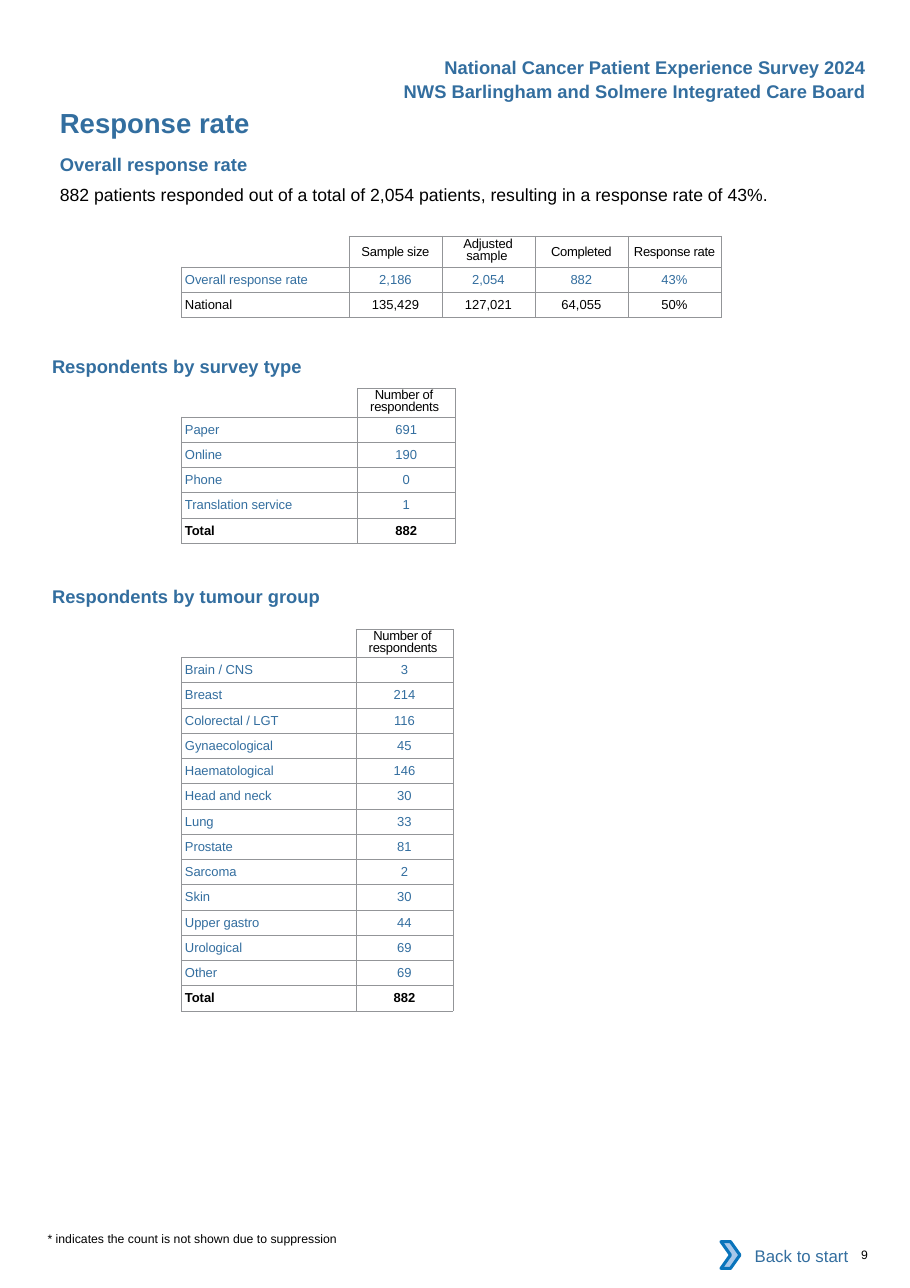
"""Build the survey response rate page."""
from dataclasses import dataclass

from lxml import etree
from pptx import Presentation
from pptx import util as u
from pptx.dml import color
from pptx.enum import shapes, text
from pptx.oxml import ns

BLUE, BLACK, WHITE, GREY = "336E9F", "000000", "FFFFFF", "939598"
LEFT, CENTER, RIGHT = text.PP_ALIGN.LEFT, text.PP_ALIGN.CENTER, text.PP_ALIGN.RIGHT
BODY_ROW_HEIGHT = 16.5
TABLE_LEFT = 118.6


@dataclass(frozen=True)
class Style:
    size: float
    color: str = BLACK
    bold: bool = False
    align: int = LEFT
    margin: float = 0
    indent: float = 0
    line_spacing: float | None = None
    tracking: float = 0


@dataclass(frozen=True)
class Label:
    words: str
    left: float
    top: float
    width: float
    height: float
    style: Style


@dataclass(frozen=True)
class Row:
    values: tuple[str, ...]
    color: str = BLUE
    bold: bool = False


@dataclass(frozen=True)
class Grid:
    top: float
    widths: tuple[float, ...]
    header_height: float
    headers: tuple[tuple[str, Style], ...]
    rows: tuple[Row, ...]


HEADING = Style(12, BLUE, True, margin=0.9)
BANNER = Style(12, BLUE, True, RIGHT)
NOTE = Style(8, margin=0.9)
HEADER = Style(8.5, align=CENTER, tracking=-0.2)
ADJUSTED = Style(8.5, margin=16, indent=-2, line_spacing=7.6, tracking=-0.1)
RESPONDENTS = Style(8.5, margin=8.4, indent=3, line_spacing=7.6, tracking=-0.2)

TITLE = Label("Response rate", 38.2, 69.1, 297.4, 21.6, Style(18, BLUE, True, margin=0.9))
LABELS = (
    Label("National Cancer Patient Experience Survey 2024", 220, 36.4, 345.9, 14.4, BANNER),
    Label("NWS Barlingham and Solmere Integrated Care Board", 220, 52.6, 345.9, 14.4, BANNER),
    Label("Overall response rate", 38.2, 99.8, 297.4, 14.4, HEADING),
    Label("882 patients responded out of a total of 2,054 patients, "
          "resulting in a response rate of 43%.",
          38.2, 120.2, 518.4, 13.7, Style(11.5, margin=0.9)),
    Label("Respondents by survey type", 33.1, 232.3, 180, 14.4, HEADING),
    Label("Respondents by tumour group", 33.1, 382.3, 190, 14.4, HEADING),
    Label("* indicates the count is not shown due to suppression",
          30.2, 804.7, 200, 9.4, NOTE),
    Label("9", 555.6, 815.4, 36.7, 9.4, Style(8, margin=7.2)),
)
BACK_LINK = Label("Back to start", 476.6, 805.4, 85, 30.2, Style(11, BLUE, align=RIGHT))

GRIDS = (
    Grid(154.3, (109.5, 60.75, 60.75, 60.75, 61), 20.2,
         (("Sample size", HEADER), ("Adjusted sample", ADJUSTED),
          ("Completed", HEADER), ("Response rate", HEADER)),
         (Row(("Overall response rate", "2,186", "2,054", "882", "43%")),
          Row(("National", "135,429", "127,021", "64,055", "50%"), BLACK))),
    Grid(253.9, (115, 64), 18.6, (("Number of respondents", RESPONDENTS),),
         (Row(("Paper", "691")), Row(("Online", "190")), Row(("Phone", "0")),
          Row(("Translation service", "1")), Row(("Total", "882"), BLACK, True))),
    Grid(411.1, (114, 63.5), 18.6, (("Number of respondents", RESPONDENTS),),
         (Row(("Brain / CNS", "3")), Row(("Breast", "214")),
          Row(("Colorectal / LGT", "116")), Row(("Gynaecological", "45")),
          Row(("Haematological", "146")), Row(("Head and neck", "30")),
          Row(("Lung", "33")), Row(("Prostate", "81")), Row(("Sarcoma", "2")),
          Row(("Skin", "30")), Row(("Upper gastro", "44")), Row(("Urological", "69")),
          Row(("Other", "69")), Row(("Total", "882"), BLACK, True))),
)


def rgb(value: str) -> color.RGBColor:
    return color.RGBColor.from_string(value)


def write(frame, words: str, style: Style) -> None:
    frame.text = words
    paragraph = frame.paragraphs[0]
    paragraph.alignment = style.align
    if style.line_spacing:
        paragraph.line_spacing = u.Pt(style.line_spacing)
    properties = paragraph._p.get_or_add_pPr()
    properties.set("marL", str(u.Pt(style.margin)))
    properties.set("indent", str(u.Pt(style.indent)))
    for run in paragraph.runs:
        run.font.name = "Arial"
        run.font.size = u.Pt(style.size)
        run.font.bold = style.bold
        run.font.color.rgb = rgb(style.color)
        run._r.get_or_add_rPr().set("spc", str(round(style.tracking * 100)))


def fill_label(shape, label: Label) -> None:
    shape.left, shape.top = u.Pt(label.left), u.Pt(label.top)
    shape.width, shape.height = u.Pt(label.width), u.Pt(label.height)
    frame = shape.text_frame
    frame.margin_left = frame.margin_right = frame.margin_top = frame.margin_bottom = 0
    frame.word_wrap = True
    frame.auto_size = text.MSO_AUTO_SIZE.NONE
    frame.vertical_anchor = text.MSO_ANCHOR.TOP
    write(frame, label.words, label.style)


def format_cell(cell, visible_sides: str) -> None:
    cell.margin_left = cell.margin_right = cell.margin_top = cell.margin_bottom = 0
    cell.vertical_anchor = text.MSO_ANCHOR.MIDDLE
    properties = cell._tc.get_or_add_tcPr()
    for side in "LRTB":
        line = etree.SubElement(properties, ns.qn(f"a:ln{side}"), w=str(u.Pt(0.5)))
        if side in visible_sides:
            solid = etree.SubElement(line, ns.qn("a:solidFill"))
            etree.SubElement(solid, ns.qn("a:srgbClr"), val=GREY)
        else:
            etree.SubElement(line, ns.qn("a:noFill"))
    cell.fill.background()


def draw_grid(slide, grid: Grid) -> None:
    heights = [grid.header_height] + [BODY_ROW_HEIGHT] * len(grid.rows)
    table = slide.shapes.add_table(
        len(heights), len(grid.widths), u.Pt(TABLE_LEFT), u.Pt(grid.top),
        u.Pt(sum(grid.widths)), u.Pt(sum(heights))).table
    table.first_row = table.horz_banding = False
    for column, width in zip(table.columns, grid.widths):
        column.width = u.Pt(width)
    for table_row, height in zip(table.rows, heights):
        table_row.height = u.Pt(height)
    corner = table.cell(0, 0)
    format_cell(corner, "RB")
    etree.SubElement(corner.text_frame.paragraphs[0]._p, ns.qn("a:endParaRPr"), sz="850")
    for column_index, (words, style) in enumerate(grid.headers, 1):
        cell = table.cell(0, column_index)
        format_cell(cell, "LRTB")
        write(cell.text_frame, words, style)
    for row_index, row in enumerate(grid.rows, 1):
        name_style = Style(8.5, row.color, row.bold, margin=2.3, tracking=-0.05)
        value_style = Style(8.5, row.color, row.bold, CENTER)
        for column_index, words in enumerate(row.values):
            cell = table.cell(row_index, column_index)
            format_cell(cell, "LRTB")
            write(cell.text_frame, words, value_style if column_index else name_style)


def draw_back_link(slide) -> None:
    panel = slide.shapes.add_shape(shapes.MSO_SHAPE.RECTANGLE, 0, 0, 0, 0)
    panel.shadow.inherit = False
    panel.fill.solid()
    panel.fill.fore_color.rgb = rgb(WHITE)
    panel.line.fill.background()
    fill_label(panel, BACK_LINK)
    panel.text_frame.margin_right = u.Pt(7.2)
    panel.text_frame.vertical_anchor = text.MSO_ANCHOR.MIDDLE
    chevron = slide.shapes.add_shape(
        shapes.MSO_SHAPE.CHEVRON, u.Pt(471.2), u.Pt(811.4), u.Pt(12.4), u.Pt(17.5))
    chevron.shadow.inherit = False
    chevron.fill.solid()
    chevron.fill.fore_color.rgb = rgb("A8C7E9")
    chevron.line.color.rgb = rgb("0A74BB")
    chevron.line.width = u.Pt(2)


def main() -> None:
    presentation = Presentation()
    presentation.slide_width, presentation.slide_height = u.Pt(594.72), u.Pt(841.68)
    slide = presentation.slides.add_slide(presentation.slide_layouts[5])
    fill_label(slide.shapes.title, TITLE)
    for label in LABELS:
        fill_label(slide.shapes.add_textbox(0, 0, 0, 0), label)
    for grid in GRIDS:
        draw_grid(slide, grid)
    draw_back_link(slide)
    presentation.save("out.pptx")


if __name__ == "__main__":
    main()
